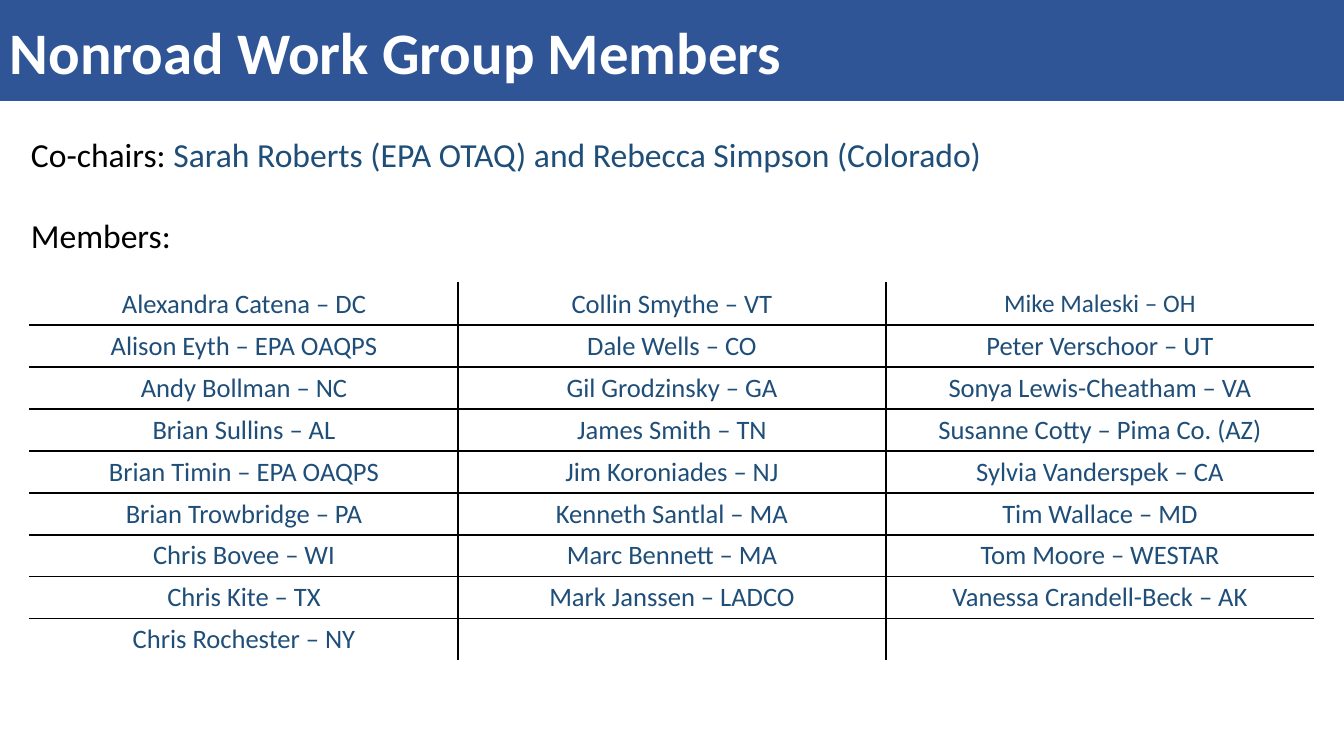
from lxml.etree import SubElement
from pptx import Presentation
from pptx.dml.color import RGBColor
from pptx.enum.shapes import MSO_SHAPE as SHAPE
from pptx.enum.text import MSO_ANCHOR as ANCHOR, PP_ALIGN as ALIGN
from pptx.oxml.ns import qn
from pptx.util import Emu, Pt

W, H = 1344, 756
BLUE, NAVY, BLACK, WHITE = "2F5597", "1F4E79", "000000", "FFFFFF"
CHAIRS = "Sarah Roberts (EPA OTAQ) and Rebecca Simpson (Colorado)"
MEMBERS = [
    ["Alexandra Catena – DC", "Collin Smythe – VT", "Mike Maleski – OH"],
    ["Alison Eyth – EPA OAQPS", "Dale Wells – CO", "Peter Verschoor – UT"],
    ["Andy Bollman – NC", "Gil Grodzinsky – GA", "Sonya Lewis-Cheatham – VA"],
    ["Brian Sullins – AL", "James Smith – TN", "Susanne Cotty – Pima Co. (AZ)"],
    ["Brian Timin – EPA OAQPS", "Jim Koroniades – NJ", "Sylvia Vanderspek – CA"],
    ["Brian Trowbridge – PA", "Kenneth Santlal – MA", "Tim Wallace – MD"],
    ["Chris Bovee – WI", "Marc Bennett – MA", "Tom Moore – WESTAR"],
    ["Chris Kite – TX", "Mark Janssen – LADCO", "Vanessa Crandell-Beck – AK"],
    ["Chris Rochester – NY", "", ""],
]


def px(n):
    """Turn slide pixels into EMU."""
    return Emu(round(n * 914400 / 100.8))


def rgb(color):
    """Turn a hex string into a colour."""
    return RGBColor.from_string(color)


def add_run(p, text, size, color, bold=False):
    """Add one formatted run to a paragraph."""
    r = p.add_run()
    r.text = text
    r.font.name, r.font.size, r.font.bold = "Calibri", Pt(size), bold
    r.font.color.rgb = rgb(color)


def add_title(s, x, y, w, h):
    """Draw the title band."""
    sp = s.shapes.add_shape(SHAPE.RECTANGLE, px(x), px(y), px(w), px(h))
    sp.shadow.inherit = False
    sp.fill.solid()
    sp.fill.fore_color.rgb = rgb(BLUE)
    sp.line.fill.background()
    tf = sp.text_frame
    tf.word_wrap, tf.vertical_anchor = True, ANCHOR.MIDDLE
    p = tf.paragraphs[0]
    p.alignment = ALIGN.LEFT
    add_run(p, "Nonroad Work Group Members", 42, WHITE, True)


def add_intro(s, x, y, w, h):
    """Write the co-chairs line and the members heading."""
    tf = s.shapes.add_textbox(px(x), px(y), px(w), px(h)).text_frame
    tf.word_wrap = False
    p = tf.paragraphs[0]
    add_run(p, "Co-chairs: ", 24, BLACK)
    add_run(p, CHAIRS, 24, NAVY)
    p = tf.add_paragraph()
    p.space_before = Pt(29)
    add_run(p, "Members:", 24, BLACK)


def set_borders(cell, colors):
    """Give a cell its left, right, top and bottom lines."""
    tc_pr = cell._tc.get_or_add_tcPr()
    for i, (side, color) in enumerate(zip("LRTB", colors)):
        ln = SubElement(tc_pr, qn(f"a:ln{side}"), w=str(Pt(1)))
        fill = SubElement(ln, qn("a:solidFill"))
        SubElement(fill, qn("a:srgbClr"), val=color)
        tc_pr.insert(i, ln)


def add_members(s, x, y, w, h):
    """Draw the member table with inner rules only."""
    rows, cols = len(MEMBERS), len(MEMBERS[0])
    table = s.shapes.add_table(rows, cols, px(x), px(y), px(w), px(h)).table
    table.first_row = table.horz_banding = False
    for col in table.columns:
        col.width = px(w // cols)
    for i, names in enumerate(MEMBERS):
        table.rows[i].height = px(h // rows)
        for j, name in enumerate(names):
            cell = table.cell(i, j)
            cell.fill.background()
            cell.vertical_anchor = ANCHOR.MIDDLE
            cell.margin_top = cell.margin_bottom = px(4)
            outer = (j == 0, j == cols - 1, i == 0, i == rows - 1)
            set_borders(cell, [WHITE if edge else BLACK for edge in outer])
            if name:
                p = cell.text_frame.paragraphs[0]
                p.alignment = ALIGN.CENTER
                add_run(p, name, 18 if (i, j) == (0, cols - 1) else 19, NAVY)


def main():
    """Build and save the slide."""
    prs = Presentation()
    prs.slide_width, prs.slide_height = px(W), px(H)
    s = prs.slides.add_slide(prs.slide_layouts[6])
    add_title(s, 0, 0, W, 101)
    add_intro(s, 21, 129, 979, 132)
    add_members(s, 30, 283, 1284, 378)
    prs.save("out.pptx")


if __name__ == "__main__":
    main()
